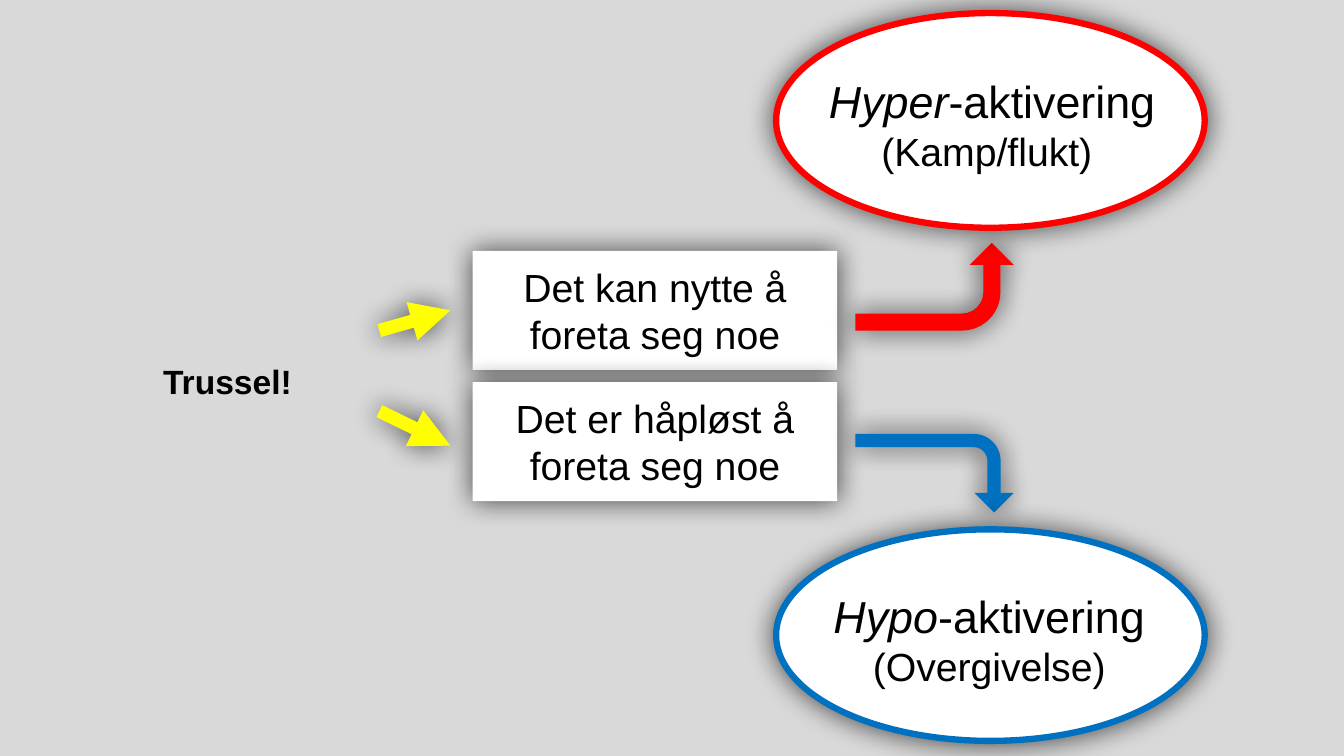
from lxml import etree
from pptx import Presentation
from pptx.dml.color import RGBColor
from pptx.enum.shapes import MSO_CONNECTOR, MSO_SHAPE
from pptx.enum.text import MSO_ANCHOR, PP_ALIGN
from pptx.oxml.ns import qn
from pptx.util import Cm, Pt

RECTANGLE, OVAL, BENT_ARROW = MSO_SHAPE.RECTANGLE, MSO_SHAPE.OVAL, MSO_SHAPE.BENT_ARROW
STRAIGHT = MSO_CONNECTOR.STRAIGHT
LEFT, CENTER, MIDDLE = PP_ALIGN.LEFT, PP_ALIGN.CENTER, MSO_ANCHOR.MIDDLE

GREY, WHITE, BLACK = "D9D9D9", "FFFFFF", "000000"
RED, BLUE, YELLOW = "FF0000", "0070C0", "FFFF00"


def paint(fill, color):
    fill.solid()
    fill.fore_color.rgb = RGBColor.from_string(color)


def add_glow(part):
    """Soft dark shadow on all sides; call after fill and line are set."""
    effects = etree.SubElement(part._element.spPr, qn("a:effectLst"))
    shadow = etree.SubElement(effects, qn("a:outerShdw"), blurRad=str(Pt(20)),
                              dist="0", dir="0", algn="ctr", rotWithShape="0")
    black = etree.SubElement(shadow, qn("a:srgbClr"), val=BLACK)
    etree.SubElement(black, qn("a:alpha"), val="68000")


prs = Presentation()
prs.slide_width, prs.slide_height = Cm(33.87), Cm(19.05)
slide = prs.slides.add_slide(prs.slide_layouts[6])
paint(slide.background.fill, GREY)
shapes = slide.shapes

# Appraisals of the threat
for top, thought in [(6.32, "Det kan nytte å foreta seg noe"),
                     (9.63, "Det er håpløst å foreta seg noe")]:
    appraisal = shapes.add_shape(RECTANGLE, Cm(11.91), Cm(top), Cm(9.19), Cm(3))
    paint(appraisal.fill, WHITE)
    appraisal.line.fill.background()
    add_glow(appraisal)
    appraisal.text_frame.text = thought
    appraisal.text_frame.vertical_anchor = MIDDLE
    paragraph = appraisal.text_frame.paragraphs[0]
    paragraph.alignment = CENTER
    font = paragraph.runs[0].font
    font.name, font.size = "Arial", Pt(28)
    font.color.rgb = RGBColor.from_string(BLACK)

# Arrows from the threat to the appraisals
for start_y, end_y in [(8.33, 7.82), (10.36, 11.23)]:
    arrow = shapes.add_connector(STRAIGHT, Cm(9.56), Cm(start_y), Cm(11.35), Cm(end_y))
    paint(arrow.line.fill, YELLOW)
    arrow.line.width = Pt(9.5)
    etree.SubElement(arrow.line._get_or_add_ln(), qn("a:tailEnd"), type="triangle")
    add_glow(arrow)

# Bent arrows from the appraisals to the reactions
for left, top, width, color, turns_up, adjustments in [
        (22.45, 5.23, 2.21, RED, True, (0.195, 0.25, 0.25, 0.438)),
        (22.56, 9.93, 1.98, BLUE, False, (0.168, 0.25, 0.25, 0.343))]:
    bend = shapes.add_shape(BENT_ARROW, Cm(left), Cm(top), Cm(width), Cm(3.99))
    bend.rotation = 90
    if turns_up:
        bend._element.spPr.xfrm.set("flipH", "1")
    for index, value in enumerate(adjustments):
        bend.adjustments[index] = value
    paint(bend.fill, color)
    bend.line.fill.background()
    add_glow(bend)

# Reactions
for top, height, color in [(0.33, 5.41, RED), (13.34, 5.33, BLUE)]:
    reaction = shapes.add_shape(OVAL, Cm(19.56), Cm(top), Cm(10.8), Cm(height))
    paint(reaction.fill, WHITE)
    paint(reaction.line.fill, color)
    reaction.line.width = Pt(4.5)
    add_glow(reaction)

# Labels: each line is a list of (text, size, bold, italic)
labels = [
    (3.86, 8.97, 4.11, 1.4, LEFT, [[("Trussel!", 24, True, False)]]),
    (19.66, 1.73, 10.69, 4.19, CENTER,
     [[("Hyper", 32, False, True), ("-aktivering", 32, False, False)],
      [("(Kamp/flukt) ", 28, False, False)]]),
    (19.71, 14.71, 10.44, 2.82, CENTER,
     [[("Hypo", 32, False, True), ("-aktivering", 32, False, False)],
      [("(Overgivelse)", 28, False, False)]]),
]
for left, top, width, height, alignment, lines in labels:
    frame = shapes.add_textbox(Cm(left), Cm(top), Cm(width), Cm(height)).text_frame
    frame.word_wrap = True
    for number, line in enumerate(lines):
        paragraph = frame.add_paragraph() if number else frame.paragraphs[0]
        paragraph.alignment = alignment
        for text, size, bold, italic in line:
            run = paragraph.add_run()
            run.text = text
            run.font.name, run.font.size = "Arial", Pt(size)
            run.font.bold, run.font.italic = bold, italic
            run.font.color.rgb = RGBColor.from_string(BLACK)

prs.save("out.pptx")
